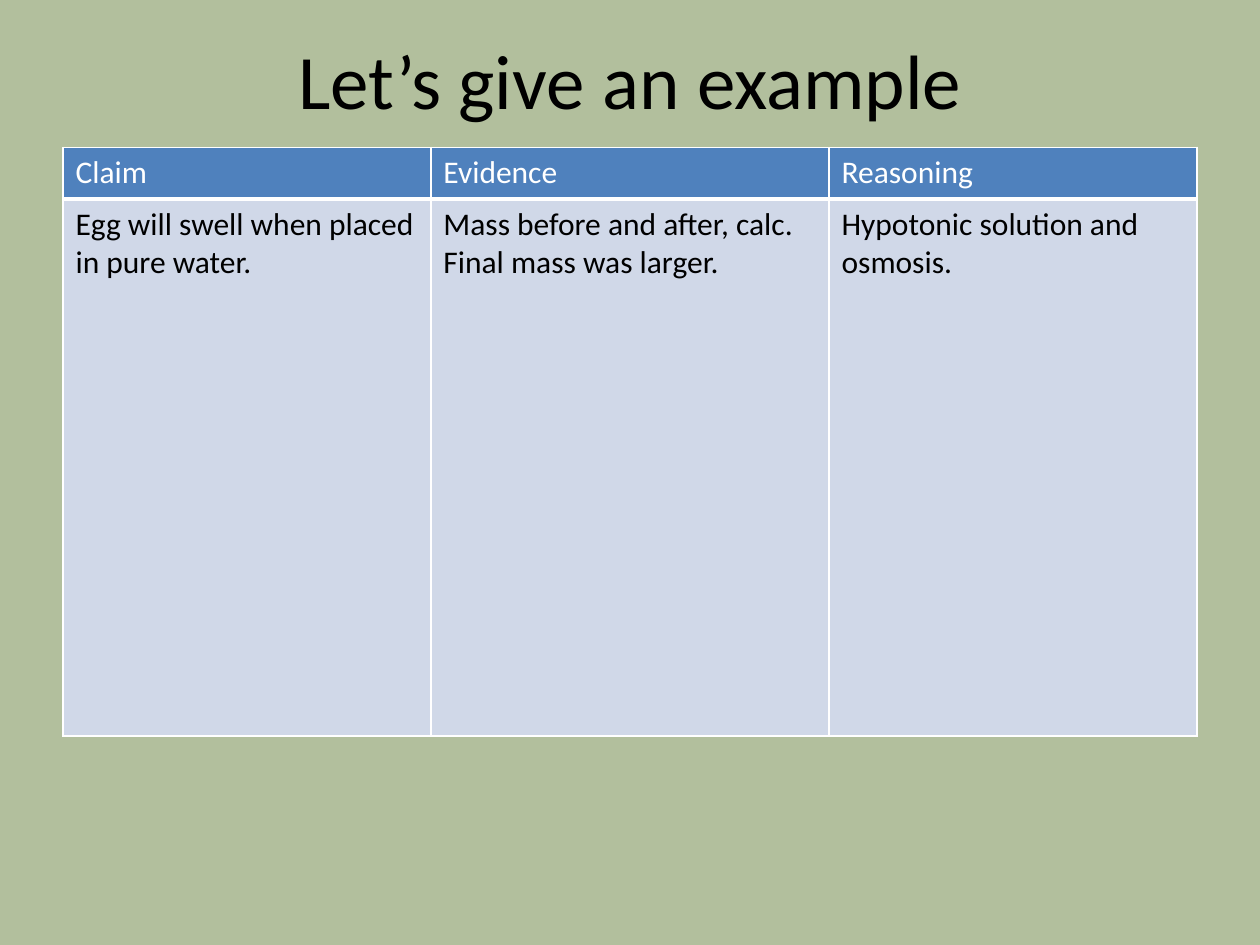
from pptx import Presentation
from pptx import util as u
from pptx.dml.color import RGBColor
from pptx.enum import text
from pptx.oxml import parse_xml
from pptx.oxml.ns import nsdecls

WIDE, HIGH = 10, 7.5
EDGE = 0.05 * WIDE
COLS = (2.92, 3.16, 2.92)
ROWS = (0.41, 4.26)
HEADS = ("Claim", "Evidence", "Reasoning")
NOTES = (
    "Egg will swell when placed in pure water.",
    "Mass before and after, calc.  Final mass was larger.",
    "Hypotonic solution and osmosis.",
)


def paint(fill, color):
    fill.solid()
    fill.fore_color.rgb = RGBColor.from_string(color)


def style(frame, size, color):
    for para in frame.paragraphs:
        for run in para.runs:
            run.font.name = "Calibri"
            run.font.size = u.Pt(size)
            paint(run.font.fill, color)


def place(shape, left, top, width, height):
    shape.left, shape.top = u.Inches(left), u.Inches(top)
    shape.width, shape.height = u.Inches(width), u.Inches(height)


def border(cell, base):
    """Rule all four sides in white; base is the bottom width in points."""
    props = cell._tc.get_or_add_tcPr()
    for side, width in zip("LRTB", (1, 1, 1, base)):
        props.append(parse_xml(
            f'<a:ln{side} {nsdecls("a")} w="{u.Pt(width)}"><a:solidFill>'
            f'<a:srgbClr val="FFFFFF"/></a:solidFill></a:ln{side}>'))


def add_title(slide, words):
    title = slide.shapes.title
    place(title, EDGE, 0, WIDE - 2 * EDGE, HIGH / 6)
    frame = title.text_frame
    frame.text = words
    frame.vertical_anchor = text.MSO_ANCHOR.MIDDLE
    frame.paragraphs[0].alignment = text.PP_ALIGN.CENTER
    style(frame, 44, "000000")


def fill_row(table, row, words, back, ink, base):
    for cell, word in zip(table.rows[row].cells, words):
        cell.text_frame.text = word
        style(cell.text_frame, 18, ink)
        border(cell, base)
        paint(cell.fill, back)


def add_grid(slide):
    box = (EDGE, 1.17, sum(COLS), sum(ROWS))
    table = slide.shapes.add_table(
        len(ROWS), len(COLS), *map(u.Inches, box)).table
    for col, width in zip(table.columns, COLS):
        col.width = u.Inches(width)
    for row, height in zip(table.rows, ROWS):
        row.height = u.Inches(height)
    fill_row(table, 0, HEADS, "4F81BD", "FFFFFF", 3)
    fill_row(table, 1, NOTES, "D0D8E8", "000000", 1)


def main():
    deck = Presentation()
    deck.slide_width, deck.slide_height = u.Inches(WIDE), u.Inches(HIGH)
    slide = deck.slides.add_slide(deck.slide_layouts[5])
    paint(slide.background.fill, "B2BF9D")
    add_title(slide, "Let’s give an example")
    add_grid(slide)
    deck.save("out.pptx")


if __name__ == "__main__":
    main()
